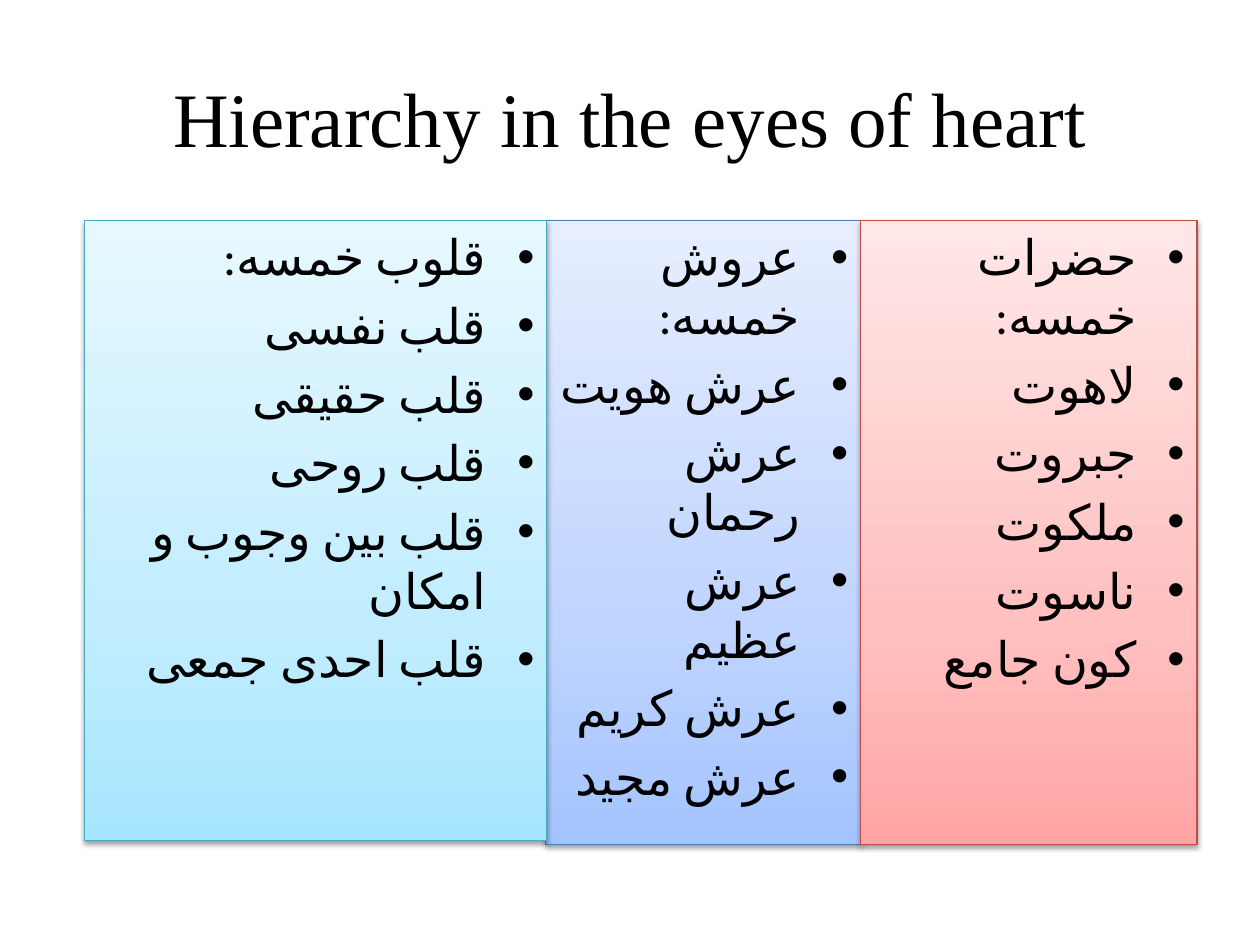
from lxml.etree import SubElement
from pptx import Presentation
from pptx.dml.color import RGBColor
from pptx.enum.shapes import MSO_SHAPE as Shape
from pptx.enum.text import MSO_ANCHOR as Anchor, PP_ALIGN as Align
from pptx.oxml.ns import qn
from pptx.util import Inches, Pt

BLACK = RGBColor(0x00, 0x00, 0x00)
# Each scheme: outline, then gradient colours from bottom to top
BLUE = (RGBColor(0x4B, 0x7E, 0xBC), RGBColor(0xA4, 0xC4, 0xFF),
        RGBColor(0xBF, 0xD4, 0xFF), RGBColor(0xE6, 0xEE, 0xFF))
RED = (RGBColor(0xBF, 0x4C, 0x48), RGBColor(0xFF, 0xA6, 0xA5),
       RGBColor(0xFF, 0xC0, 0xBF), RGBColor(0xFF, 0xE7, 0xE7))
AQUA = (RGBColor(0x46, 0xAA, 0xC5), RGBColor(0xA7, 0xE6, 0xFF),
        RGBColor(0xC1, 0xED, 0xFF), RGBColor(0xE7, 0xF8, 0xFF))
GRADIENT_POSITIONS = (0, 35, 100)

TOP = 1.75
COLUMNS = [
    ((4.33, TOP, 2.5, 4.95), BLUE,
     ["عروش خمسه:", "عرش هویت", "عرش رحمان", "عرش عظیم", "عرش کریم", "عرش مجید"]),
    ((6.83, TOP, 2.67, 4.95), RED,
     ["حضرات خمسه:", "لاهوت", "جبروت", "ملکوت", "ناسوت", "کون جامع"]),
    ((0.67, TOP, 3.67, 4.92), AQUA,
     ["قلوب خمسه:", "قلب نفسی", "قلب حقیقی", "قلب روحی",
      "قلب بین وجوب و امکان", "قلب احدی جمعی"]),
]


def write_text(shape, lines, size, font, align, anchor, bullets=False):
    frame = shape.text_frame
    frame.word_wrap = True
    frame.vertical_anchor = anchor
    for index, line in enumerate(lines):
        paragraph = frame.add_paragraph() if index else frame.paragraphs[0]
        paragraph.alignment = align
        run = paragraph.add_run()
        run.text = line
        run.font.size = Pt(size)
        run.font.name = font
        run.font.color.rgb = BLACK
        if bullets:
            add_rtl_bullet(paragraph)
            set_persian(run, font)


def set_persian(run, font):
    """Mark the run as Persian and use the font for its complex script too."""
    properties = run._r.get_or_add_rPr()
    properties.set("lang", "fa-IR")
    SubElement(properties, qn("a:cs"), typeface=font)


def add_rtl_bullet(paragraph):
    """Make the paragraph right-to-left with a hanging bullet and 20% space before."""
    properties = paragraph._p.get_or_add_pPr()
    indent = Inches(0.38)
    properties.set("marL", str(indent))
    properties.set("indent", str(-indent))
    properties.set("rtl", "1")
    space_before = SubElement(properties, qn("a:spcBef"))
    SubElement(space_before, qn("a:spcPct"), val="20000")
    SubElement(properties, qn("a:buFont"), typeface="Arial")
    SubElement(properties, qn("a:buChar"), char="•")


def fill_gradient(shape, colors):
    shape.fill.gradient()
    shape.fill.gradient_angle = 90
    stops = shape._element.spPr.find(".//" + qn("a:gsLst"))
    for stop in list(stops):
        stops.remove(stop)
    for position, color in zip(GRADIENT_POSITIONS, colors):
        stop = SubElement(stops, qn("a:gs"), pos=str(position * 1000))
        SubElement(stop, qn("a:srgbClr"), val=str(color))


def add_soft_shadow(shape):
    shape.shadow.inherit = False
    effects = shape._element.spPr.find(qn("a:effectLst"))
    shadow = SubElement(effects, qn("a:outerShdw"), blurRad=str(Pt(3.1)),
                        dist=str(Pt(1.6)), dir="5400000", rotWithShape="0")
    color = SubElement(shadow, qn("a:srgbClr"), val=str(BLACK))
    SubElement(color, qn("a:alpha"), val="38000")


def add_title(slide, box, text):
    title = slide.shapes.add_textbox(*map(Inches, box))
    write_text(title, [text], size=44, font="Times New Roman",
               align=Align.CENTER, anchor=Anchor.MIDDLE)


def add_column(slide, box, scheme, lines):
    outline, *gradient = scheme
    column = slide.shapes.add_shape(Shape.RECTANGLE, *map(Inches, box))
    fill_gradient(column, gradient)
    column.line.color.rgb = outline
    column.line.width = Pt(0.75)
    add_soft_shadow(column)
    write_text(column, lines, size=28, font="Calibri",
               align=Align.RIGHT, anchor=Anchor.TOP, bullets=True)


def main():
    presentation = Presentation()
    presentation.slide_width = Inches(10)
    presentation.slide_height = Inches(7.5)
    slide = presentation.slides.add_slide(presentation.slide_layouts[6])
    add_title(slide, (0.5, 0.3, 9, 1.25), "Hierarchy in the eyes of heart")
    for box, scheme, lines in COLUMNS:
        add_column(slide, box, scheme, lines)
    presentation.save("out.pptx")


if __name__ == "__main__":
    main()
